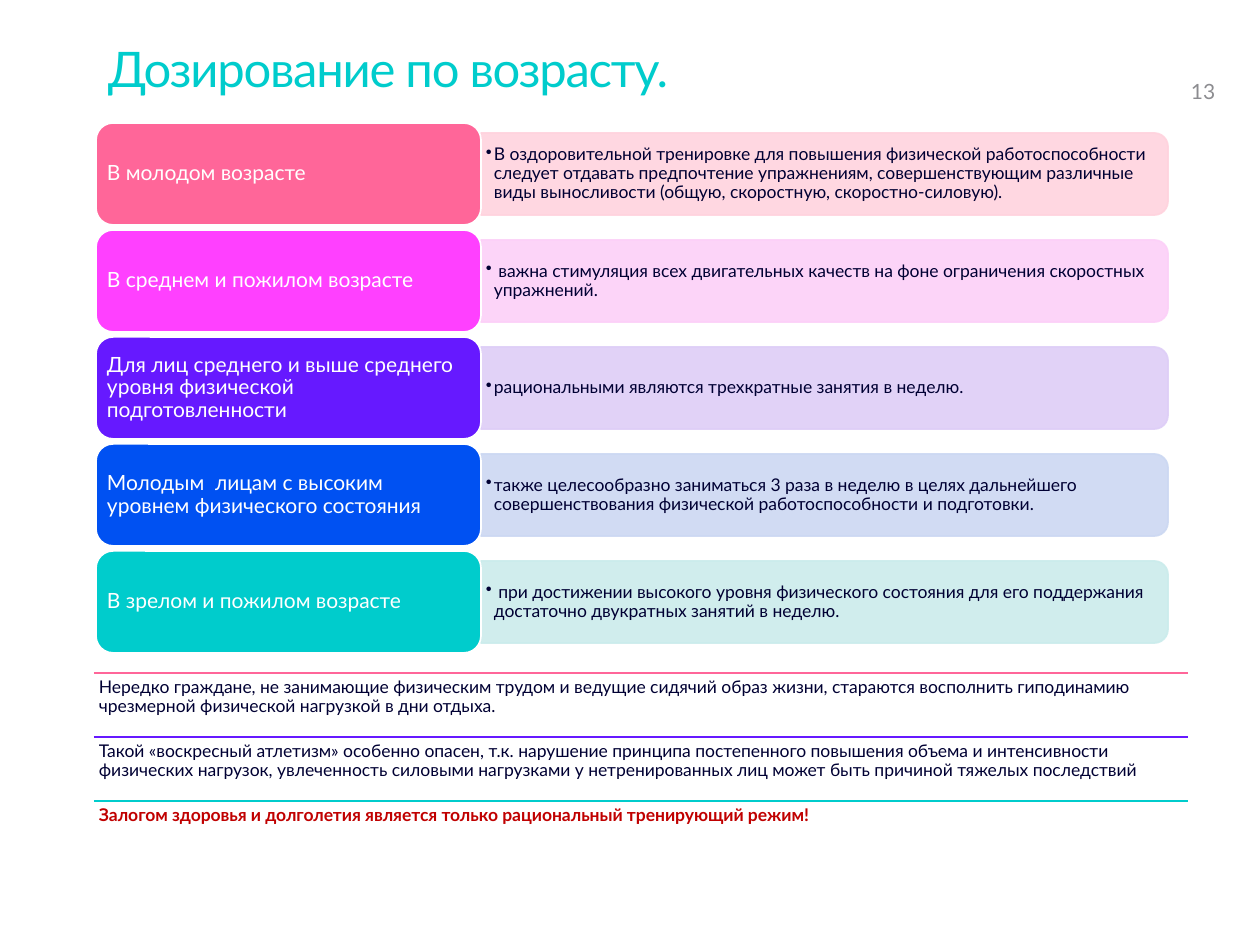
from pptx import Presentation
from pptx.dml.color import RGBColor
from pptx.enum.shapes import MSO_CONNECTOR, MSO_SHAPE
from pptx.enum.text import MSO_ANCHOR, MSO_AUTO_SIZE, PP_ALIGN
from pptx.oxml.ns import qn
from pptx.util import Emu, Pt
from lxml import etree

TOP, MIDDLE, BOTTOM = MSO_ANCHOR.TOP, MSO_ANCHOR.MIDDLE, MSO_ANCHOR.BOTTOM
LEFT = PP_ALIGN.LEFT
ROUNDED, ROUNDED_TOP = MSO_SHAPE.ROUNDED_RECTANGLE, MSO_SHAPE.ROUND_2_SAME_RECTANGLE
STRAIGHT = MSO_CONNECTOR.STRAIGHT
NO_AUTOFIT = MSO_AUTO_SIZE.NONE

PX_PER_INCH = 126
FONT = "Lato"
COLORS = {
    "ink": "000033", "white": "FFFFFF", "grey": "8C8C90", "red": "C00000",
    "pink": "FF6699", "pink_tint": "FFD3DE",
    "magenta": "FF40FF", "magenta_tint": "FCD0F8",
    "violet": "6619FF", "violet_tint": "DECEF7",
    "blue": "0051F2", "blue_tint": "CCD8F2",
    "teal": "00CCCC", "teal_tint": "CBECEC",
}

ROW_TOP, ROW_PITCH = 123, 107
LABEL_X, LABEL_W, LABEL_H = 96, 385, 102
BAR_W, BAR_H = 687, 82
ADVICE_W, ADVICE_H = 683, 73
NOTE_X, NOTE_TOP, NOTE_W, NOTE_H = 94, 673, 1094, 64

AGE_ROWS = [
    ("pink", "В молодом возрасте",
     "В оздоровительной тренировке для повышения физической работоспособности следует "
     "отдавать предпочтение упражнениям, совершенствующим различные виды выносливости "
     "(общую, скоростную, скоростно-силовую)."),
    ("magenta", "В среднем и пожилом возрасте",
     " важна стимуляция всех двигательных качеств на фоне ограничения скоростных "
     "упражнений."),
    ("violet", "Для лиц среднего и выше среднего уровня физической подготовленности",
     "рациональными являются трехкратные занятия в неделю."),
    ("blue", "Молодым  лицам с высоким  уровнем физического состояния",
     "также целесообразно заниматься 3 раза в неделю в целях дальнейшего "
     "совершенствования физической работоспособности и подготовки."),
    ("teal", "В зрелом и пожилом возрасте",
     " при достижении высокого уровня физического состояния для его поддержания "
     "достаточно двукратных занятий в неделю."),
]
NOTES = [
    ("pink", "ink", False,
     "Нередко граждане, не занимающие физическим трудом и ведущие сидячий образ жизни, "
     "стараются восполнить гиподинамию чрезмерной физической нагрузкой в дни отдыха."),
    ("violet", "ink", False,
     "Такой «воскресный атлетизм» особенно опасен, т.к. нарушение принципа постепенного "
     "повышения объема и интенсивности физических нагрузок, увлеченность силовыми "
     "нагрузками у нетренированных лиц может быть причиной тяжелых последствий"),
    ("teal", "red", True,
     "Залогом здоровья и долголетия является только рациональный тренирующий режим!"),
]


def px(n):
    return Emu(round(n * 914400 / PX_PER_INCH))


def rgb(name):
    return RGBColor.from_string(COLORS[name])


def write(tf, text, size, color, anchor=TOP, insets=(0, 0), spacing=0.9, bold=False):
    """Fill a frame with one left-aligned run; insets are (horizontal, vertical) px."""
    tf.word_wrap = True
    tf.auto_size = NO_AUTOFIT
    tf.vertical_anchor = anchor
    tf.margin_left = tf.margin_right = px(insets[0])
    tf.margin_top = tf.margin_bottom = px(insets[1])
    p = tf.paragraphs[0]
    p.alignment = LEFT
    p.line_spacing = spacing
    r = p.add_run()
    r.text = text
    r.font.name, r.font.size, r.font.bold = FONT, Pt(size), bold
    r.font.color.rgb = rgb(color)
    return p


def add_text(s, x, y, w, h, *args, **kwargs):
    box = s.shapes.add_textbox(px(x), px(y), px(w), px(h))
    return write(box.text_frame, *args, **kwargs)


def add_bullet(p, indent):
    pPr = p._p.get_or_add_pPr()
    pPr.set("marL", str(px(indent)))
    pPr.set("indent", str(-px(indent)))
    etree.SubElement(pPr, qn("a:buChar")).set("char", "•")


def add_block(s, kind, x, y, w, h, fill, line):
    sp = s.shapes.add_shape(kind, px(x), px(y), px(w), px(h))
    sp.shadow.inherit = False
    sp.fill.solid()
    sp.fill.fore_color.rgb = rgb(fill)
    sp.line.color.rgb = rgb(line)
    sp.line.width = Pt(1)
    return sp


def add_age_row(s, y, color, label, advice):
    mid_y = y + LABEL_H / 2
    bar_x = LABEL_X + LABEL_W
    tint = color + "_tint"
    # The bar is an upright shape turned a quarter, so its round end faces right.
    bar = add_block(s, ROUNDED_TOP, bar_x + (BAR_W - BAR_H) / 2, mid_y - BAR_W / 2,
                    BAR_H, BAR_W, tint, tint)
    bar.rotation = 90
    for clr in bar._element.spPr.iter(qn("a:srgbClr")):
        etree.SubElement(clr, qn("a:alpha")).set("val", "90000")
    p = add_text(s, bar_x, mid_y - ADVICE_H / 2, ADVICE_W, ADVICE_H,
                 advice, 10, "ink", MIDDLE, (5, 3))
    add_bullet(p, 8)
    sp = add_block(s, ROUNDED, LABEL_X, y, LABEL_W, LABEL_H, color, "white")
    write(sp.text_frame, label, 12, "white", MIDDLE, (6, 4))


def add_note(s, y, line_color, text_color, bold, text):
    rule = s.shapes.add_connector(STRAIGHT, px(NOTE_X), px(y), px(NOTE_X + NOTE_W), px(y))
    rule.line.color.rgb = rgb(line_color)
    rule.line.width = Pt(1)
    etree.SubElement(rule._element.spPr, qn("a:effectLst"))
    add_text(s, NOTE_X, y, NOTE_W, NOTE_H, text, 10, text_color, insets=(5, 5), bold=bold)


def add_title(s, text):
    title = s.shapes.title
    title.left, title.top, title.width, title.height = px(108), px(35), px(1086), px(91)
    p = write(title.text_frame, text, 28, "teal", insets=(0, 6), spacing=Pt(32))
    p.runs[0].font._element.set("spc", "-70")


def main():
    prs = Presentation()
    prs.slide_width, prs.slide_height = px(1260), px(945)
    s = prs.slides.add_slide(prs.slide_layouts[5])
    add_title(s, "Дозирование по возрасту.")
    add_text(s, 1191, 50, 48, 59, "13", 12, "grey", BOTTOM, (0, 5), spacing=1.0)
    for i, row in enumerate(AGE_ROWS):
        add_age_row(s, ROW_TOP + i * ROW_PITCH, *row)
    for i, note in enumerate(NOTES):
        add_note(s, NOTE_TOP + i * NOTE_H, *note)
    prs.save("out.pptx")


if __name__ == "__main__":
    main()
